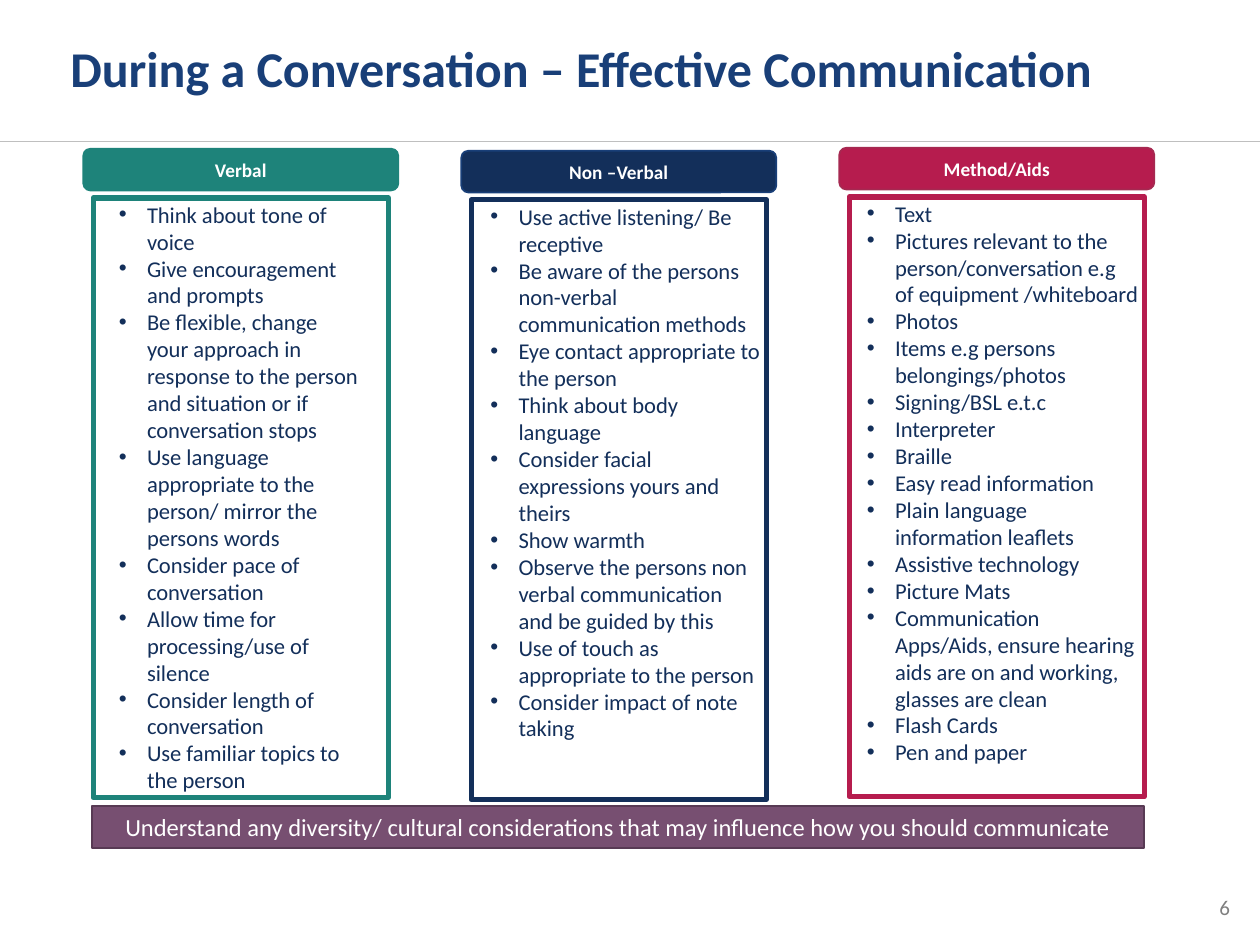
from lxml.etree import SubElement
from pptx import Presentation
from pptx.dml.color import RGBColor
from pptx.enum.shapes import MSO_CONNECTOR, MSO_SHAPE
from pptx.enum.text import MSO_ANCHOR, MSO_AUTO_SIZE, PP_ALIGN
from pptx.oxml.ns import qn
from pptx.util import Cm, Pt

COLOURS = {
    "title": "193F78",
    "navy": "132F5A",
    "teal": "1E837A",
    "crimson": "B61C4E",
    "crimson_edge": "A62951",
    "plum": "774F71",
    "plum_edge": "583A54",
    "rule": "BFBFBF",
    "number": "808080",
    "white": "FFFFFF",
}

COLUMN_LEFT, COLUMN_PITCH, COLUMN_WIDTH = 1.68, 7.62, 6.35
PANEL_INSET, PANEL_DROP, PANEL_HEIGHT = 0.2, 0.99, 12.09
HEADER_HEIGHT, LIST_DROP = 0.84, 0.92

COLUMNS = [
    {
        "heading": "Verbal", "fill": "teal", "edge": "teal",
        "top": 3.0, "holder": 2, "list_inset": 0.46, "list_width": 5.44,
        "items": [
            "Think about tone of voice",
            "Give encouragement and prompts",
            "Be flexible, change your approach in response to the person and situation or if conversation stops",
            "Use language appropriate to the person/ mirror the persons words",
            "Consider pace of conversation",
            "Allow time for processing/use of silence",
            "Consider length of conversation",
            "Use familiar topics to the person",
        ],
    },
    {
        "heading": "Non –Verbal", "fill": "navy", "edge": "title",
        "top": 3.04, "holder": 4, "list_inset": 0.33, "list_width": 5.95,
        "items": [
            "Use active listening/ Be receptive",
            "Be aware of the persons non-verbal communication methods",
            "Eye contact appropriate to the person",
            "Think about body language",
            "Consider facial expressions yours and theirs",
            "Show warmth",
            "Observe the persons non verbal communication and be guided by this",
            "Use of touch as appropriate to the person",
            "Consider impact of note taking",
        ],
    },
    {
        "heading": "Method/Aids", "fill": "crimson", "edge": "crimson_edge",
        "top": 2.98, "holder": 1, "list_inset": 0.3, "list_width": 5.99,
        "items": [
            "Text",
            "Pictures relevant to the person/conversation e.g of equipment /whiteboard",
            "Photos",
            "Items e.g persons belongings/photos",
            "Signing/BSL e.t.c",
            "Interpreter",
            "Braille",
            "Easy read information",
            "Plain language information leaflets",
            "Assistive technology",
            "Picture Mats",
            "Communication Apps/Aids, ensure hearing aids are on and working, glasses are clean",
            "Flash Cards",
            "Pen and paper",
        ],
    },
]


def colour(name):
    return RGBColor.from_string(COLOURS[name])


def move(shape, left, top, width, height):
    shape.left, shape.top = Cm(left), Cm(top)
    shape.width, shape.height = Cm(width), Cm(height)


def write(shape, *texts, size, ink, bold=False, align=PP_ALIGN.LEFT,
          anchor=MSO_ANCHOR.MIDDLE, spacing=1.0, bullet=False, margin=None):
    frame = shape.text_frame
    frame.word_wrap = True
    frame.auto_size = MSO_AUTO_SIZE.NONE
    frame.vertical_anchor = anchor
    if margin is not None:
        frame.margin_left = frame.margin_right = Cm(margin)
        frame.margin_top = frame.margin_bottom = Cm(margin)
    for index, text in enumerate(texts):
        para = frame.add_paragraph() if index else frame.paragraphs[0]
        para.alignment = align
        para.line_spacing = spacing
        para.space_before = para.space_after = Pt(0)
        if bullet:
            add_bullet(para)
        span = para.add_run()
        span.text = text
        span.font.name = "Calibri"
        span.font.size = Pt(size)
        span.font.bold = bold
        span.font.color.rgb = colour(ink)


def add_bullet(para):
    properties = para._p.get_or_add_pPr()
    properties.set("marL", str(Cm(0.57)))
    properties.set("indent", str(-Cm(0.57)))
    SubElement(properties, qn("a:buFont"), typeface="Arial")
    SubElement(properties, qn("a:buChar"), char="•")


def add_block(page, kind, box, fill, edge, weight):
    block = page.shapes.add_shape(kind, *map(Cm, box))
    block.shadow.inherit = False
    if fill:
        block.fill.solid()
        block.fill.fore_color.rgb = colour(fill)
    else:
        block.fill.background()
    block.line.color.rgb = colour(edge)
    block.line.width = Pt(weight)
    return block


def build_title(page, left, top, width, height):
    title = page.shapes.title
    move(title, left, top, width, height)
    write(title, "During a Conversation – Effective Communication",
          size=28.6, ink="title", bold=True, spacing=0.9, margin=0)
    rule = page.shapes.add_connector(
        MSO_CONNECTOR.STRAIGHT, 0, Cm(top + height), Cm(25.4), Cm(top + height))
    rule.line.color.rgb = colour("rule")
    rule.line.width = Pt(0.5)
    SubElement(rule._element.spPr, qn("a:effectLst"))


def build_column(page, column, left, top, width):
    panel = (left + PANEL_INSET, top + PANEL_DROP, width - 2 * PANEL_INSET, PANEL_HEIGHT)
    add_block(page, MSO_SHAPE.RECTANGLE, panel, None, column["fill"], 3)

    header = add_block(page, MSO_SHAPE.ROUNDED_RECTANGLE,
                       (left, top, width, HEADER_HEIGHT),
                       column["fill"], column["edge"], 1)
    write(header, column["heading"], size=11, ink="white", bold=True,
          align=PP_ALIGN.CENTER)

    points = page.placeholders[column["holder"]]
    move(points, left + column["list_inset"], top + LIST_DROP,
         column["list_width"], PANEL_HEIGHT)
    write(points, *column["items"], size=12.9, ink="navy", bullet=True,
          anchor=MSO_ANCHOR.TOP, spacing=Pt(15.4))


def build_banner(page, left, top, width, height):
    banner = add_block(page, MSO_SHAPE.RECTANGLE, (left, top, width, height),
                       "plum", "plum_edge", 1)
    write(banner,
          "Understand any diversity/ cultural considerations that may influence how you should communicate",
          size=14, ink="white", align=PP_ALIGN.CENTER, margin=0.1)


def build_page_number(page, left, top, width, height):
    box = page.shapes.add_textbox(*map(Cm, (left, top, width, height)))
    write(box, "6", size=12, ink="number", anchor=MSO_ANCHOR.TOP)


def main():
    deck = Presentation()
    deck.slide_width, deck.slide_height = Cm(25.4), Cm(19.05)
    page = deck.slides.add_slide(deck.slide_layouts[4])
    spare = page.placeholders[3]._element
    spare.getparent().remove(spare)

    build_title(page, 1.42, 0, 22.35, 2.86)
    for index, column in enumerate(COLUMNS):
        build_column(page, column, COLUMN_LEFT + index * COLUMN_PITCH,
                     column["top"], COLUMN_WIDTH)
    build_banner(page, 1.86, 16.25, 21.2, 0.85)
    build_page_number(page, 24.33, 17.9, 0.9, 0.77)
    deck.save("out.pptx")


if __name__ == "__main__":
    main()
